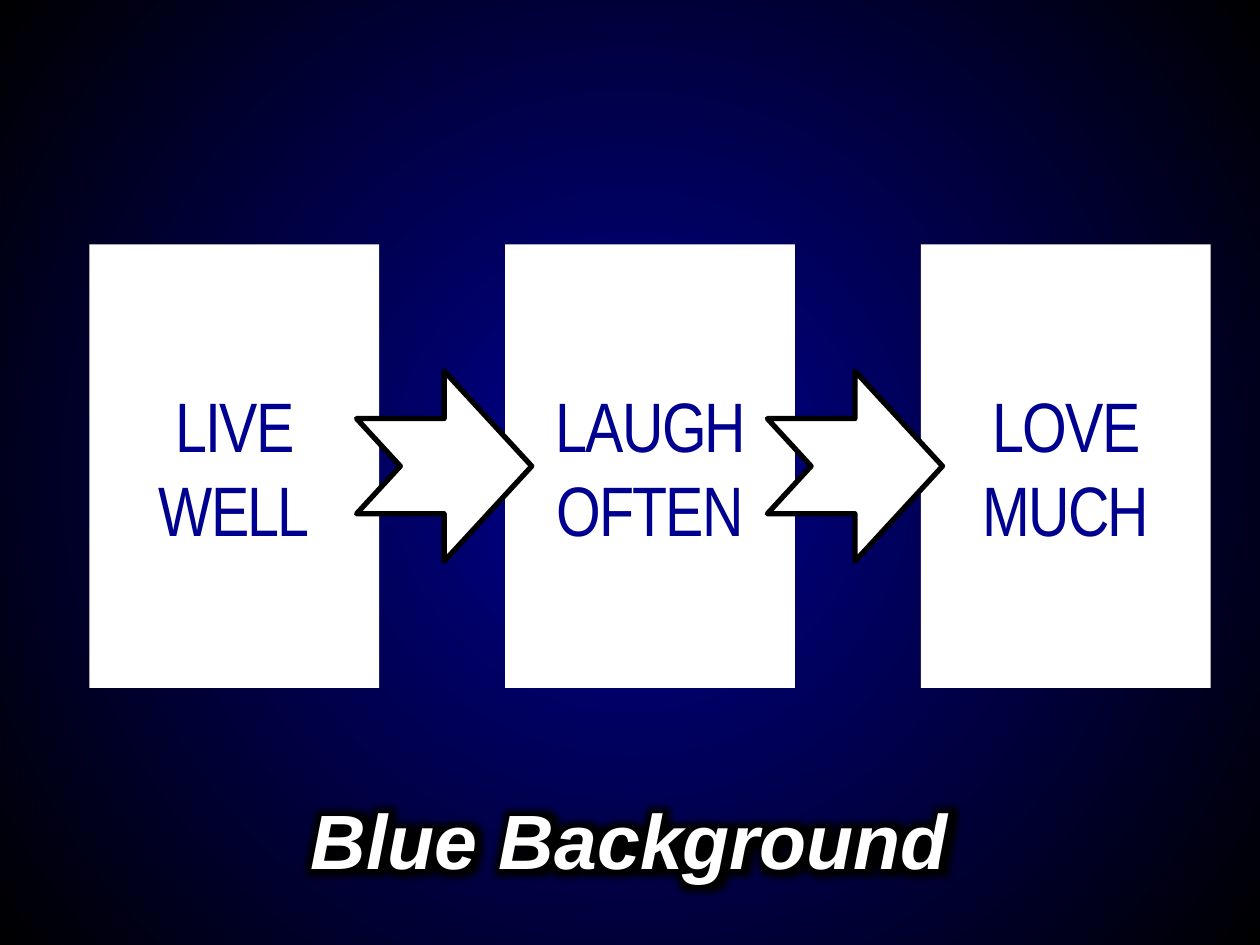
import pptx
import pptx.util
import pptx.dml.color
import pptx.enum.shapes
import pptx.enum.text
import pptx.oxml
import pptx.oxml.ns

Inches, Pt, qn = pptx.util.Inches, pptx.util.Pt, pptx.oxml.ns.qn
Shape = pptx.enum.shapes.MSO_SHAPE
NAMESPACE = 'xmlns:a="http://schemas.openxmlformats.org/drawingml/2006/main"'
NAVY, WHITE, BLACK = "000090", "FFFFFF", "000000"


def color(value):
    return pptx.dml.color.RGBColor.from_string(value)


def write(shape, text, font, size, value):
    """Fill a shape with one centred paragraph and return its run."""
    frame = shape.text_frame
    frame.text = text
    frame.word_wrap = True
    frame.vertical_anchor = pptx.enum.text.MSO_ANCHOR.MIDDLE
    para = frame.paragraphs[0]
    para.alignment = pptx.enum.text.PP_ALIGN.CENTER
    span = para.runs[0]
    span.font.name, span.font.size = font, Pt(size)
    span.font.color.rgb = color(value)
    return span


deck = pptx.Presentation()
deck.slide_width, deck.slide_height = Inches(10), Inches(7.5)
page = deck.slides.add_slide(deck.slide_layouts[5])

# Background: navy centre fading to black corners
fill = page.background.fill
fill.gradient()
for stop, value in zip(fill.gradient_stops, (NAVY, BLACK)):
    stop.color.rgb = color(value)
gradient = page.element.find(".//" + qn("a:gradFill"))
linear = gradient.find(qn("a:lin"))
gradient.replace(linear, pptx.oxml.parse_xml(
    f'<a:path {NAMESPACE} path="circle">'
    '<a:fillToRect l="50000" t="50000" r="50000" b="50000"/></a:path>'))

# Title with a black glow
title = page.shapes.title
title.left, title.top = 0, Inches(5.81)
title.width, title.height = deck.slide_width, Inches(1.7)
span = write(title, "Blue Background", "Arial", 44, WHITE)
span.font.bold = span.font.italic = True
span.font.fill._xPr.find(qn("a:solidFill")).addnext(pptx.oxml.parse_xml(
    f'<a:effectLst {NAMESPACE}><a:glow rad="{Pt(18)}">'
    f'<a:srgbClr val="{BLACK}"/></a:glow></a:effectLst>'))

# Three cards on an even pitch
card_left, card_top, card_width, card_height = 0.71, 1.94, 2.3, 3.52
card_pitch = 3.3
for column, words in enumerate(("LIVE WELL", "LAUGH OFTEN", "LOVE MUCH")):
    card = page.shapes.add_shape(
        Shape.RECTANGLE, Inches(card_left + column * card_pitch),
        Inches(card_top), Inches(card_width), Inches(card_height))
    card.shadow.inherit = False
    card.fill.solid()
    card.fill.fore_color.rgb = color(WHITE)
    card.line.fill.background()
    span = write(card, words, "Arial Narrow", 40, NAVY)
    span.font._element.set("spc", "-100")

# Arrows bridging the gaps, centred on the cards' height
arrow_width, arrow_height = 1.39, 1.51
arrow_top = card_top + (card_height - arrow_height) / 2
for arrow_left in (2.83, 6.09):
    arrow = page.shapes.add_shape(
        Shape.NOTCHED_RIGHT_ARROW, Inches(arrow_left), Inches(arrow_top),
        Inches(arrow_width), Inches(arrow_height))
    arrow.shadow.inherit = False
    arrow.fill.solid()
    arrow.fill.fore_color.rgb = color(WHITE)
    arrow.line.color.rgb = color(BLACK)
    arrow.line.width = Pt(3)
    outline = arrow.element.spPr.find(qn("a:ln"))
    outline.append(pptx.oxml.parse_xml(f"<a:round {NAMESPACE}/>"))
    outline.append(pptx.oxml.parse_xml(f'<a:tailEnd {NAMESPACE} type="stealth"/>'))

deck.save("out.pptx")
